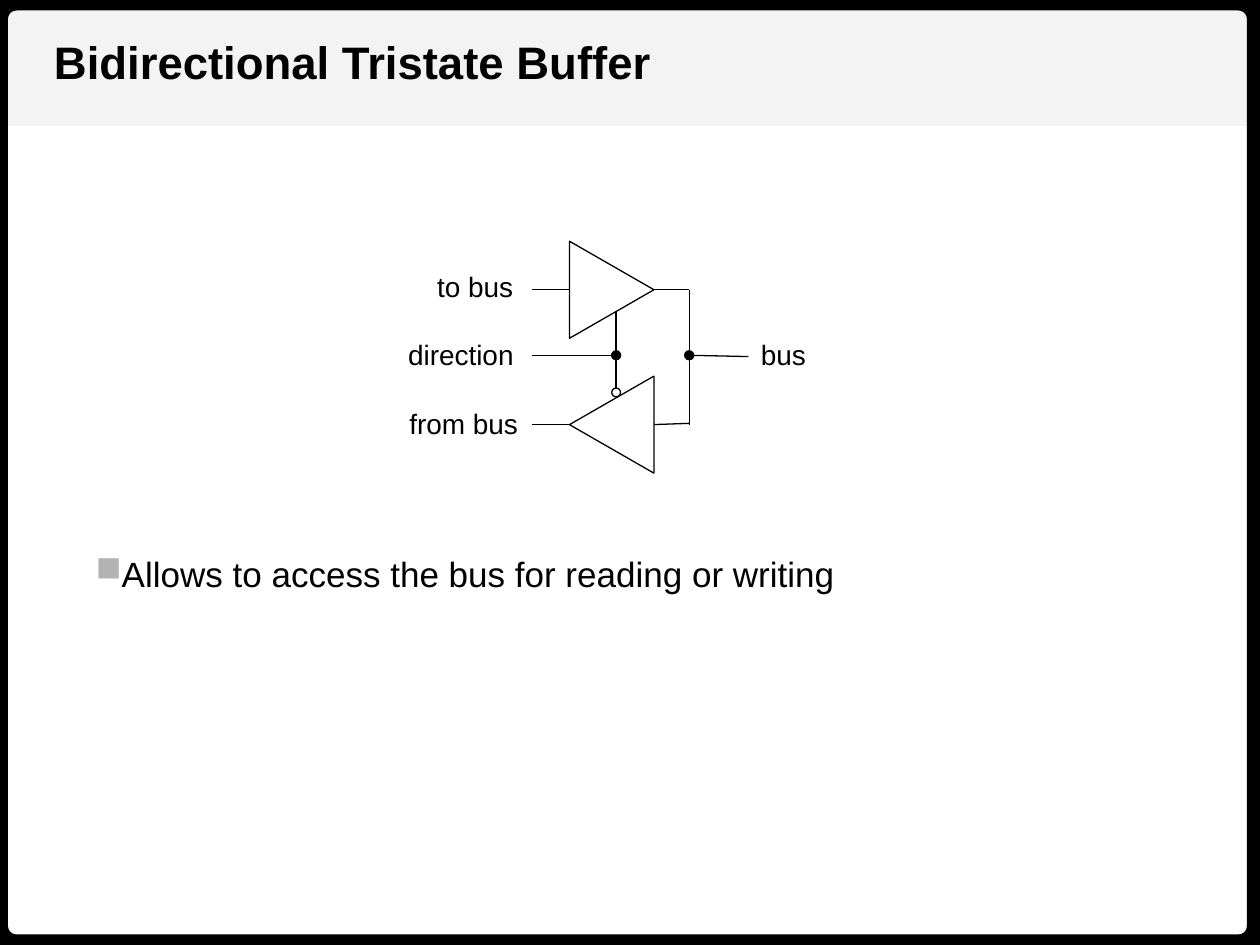
import pptx
import pptx.util
import pptx.dml.color
import pptx.enum.shapes
import pptx.enum.text
import pptx.oxml.ns
from lxml import etree
from typing import NamedTuple, Optional

COLS, ROWS = 100, 75
CELL = pptx.util.Inches(0.1)
COLORS = {"ink": "000000", "band": "F3F3F3", "paper": "FFFFFF", "bullet": "B2B2B2"}
SHAPES = pptx.enum.shapes.MSO_SHAPE
LABEL_H = 3.7
TO_ROW, DIR_ROW, FROM_ROW = 23, 28.2, 33.7
IN_COL, GATE_LEFT, GATE_RIGHT, BUS_COL = 42.2, 45.2, 51.9, 54.7
CTRL_COL, BUBBLE_ROW = 48.9, 30.8
GATE_W, GATE_H = 7.7, 6.7


class Label(NamedTuple):
    text: str
    col: float
    row: float
    width: float


class Wire(NamedTuple):
    x1: float
    y1: float
    x2: float
    y2: float
    dot: bool = False


class Gate(NamedTuple):
    row: float
    rotation: int


LABELS = [
    Label("to bus", 33.7, 20.9, 8.1),
    Label("direction", 31.4, 26.3, 10.5),
    Label("from bus", 31.5, 31.8, 10.8),
    Label("bus", 59.4, 26.3, 5.6),
]
GATES = [Gate(TO_ROW, 90), Gate(FROM_ROW, 270)]
WIRES = [
    Wire(IN_COL, TO_ROW, GATE_LEFT, TO_ROW),
    Wire(GATE_RIGHT, TO_ROW, BUS_COL, TO_ROW),
    Wire(IN_COL, FROM_ROW, GATE_LEFT, FROM_ROW),
    Wire(GATE_RIGHT, FROM_ROW, BUS_COL, FROM_ROW - 0.1),
    Wire(CTRL_COL, 24.7, CTRL_COL, BUBBLE_ROW),
    Wire(BUS_COL, TO_ROW, BUS_COL, FROM_ROW),
    Wire(BUS_COL, DIR_ROW, 59.4, DIR_ROW + 0.1, dot=True),
    Wire(CTRL_COL, DIR_ROW, IN_COL, DIR_ROW, dot=True),
]


def grid(*cells: float) -> list[int]:
    return [round(c * CELL) for c in cells]


def rgb(name: str) -> pptx.dml.color.RGBColor:
    return pptx.dml.color.RGBColor.from_string(COLORS[name])


def add_shape(s, kind, col: float, row: float, width: float, height: float,
              fill: Optional[str] = None, line: float = 0):
    sp = s.shapes.add_shape(kind, *grid(col, row, width, height))
    sp.shadow.inherit = False
    if fill:
        sp.fill.solid()
        sp.fill.fore_color.rgb = rgb(fill)
    else:
        sp.fill.background()
    if line:
        sp.line.color.rgb = rgb("ink")
        sp.line.width = pptx.util.Pt(line)
    else:
        sp.line.fill.background()
    return sp


def add_wire(s, wire: Wire) -> None:
    cx = s.shapes.add_connector(pptx.enum.shapes.MSO_CONNECTOR.STRAIGHT,
                                *grid(wire.x1, wire.y1, wire.x2, wire.y2))
    cx.line.color.rgb = rgb("ink")
    cx.line.width = pptx.util.Pt(0.75)
    qn = pptx.oxml.ns.qn
    if wire.dot:
        ln = cx.line._get_or_add_ln()
        etree.SubElement(ln, qn("a:headEnd"), type="oval")
    etree.SubElement(cx._element.spPr, qn("a:effectLst"))


def set_bullet(p, char: str, indent: float, tabs: tuple) -> None:
    qn = pptx.oxml.ns.qn
    pPr = p._p.get_or_add_pPr()
    pPr.set("marL", "0")
    pPr.set("indent", str(grid(indent)[0]))
    clr = etree.SubElement(pPr, qn("a:buClr"))
    etree.SubElement(clr, qn("a:srgbClr"), val=COLORS["bullet"])
    etree.SubElement(pPr, qn("a:buChar"), char=char)
    tab_list = etree.SubElement(pPr, qn("a:tabLst"))
    for tab in tabs:
        etree.SubElement(tab_list, qn("a:tab"), pos=str(grid(tab)[0]), algn="l")


def add_text(s, text: str, col: float, row: float, width: float, height: float, *,
             size: float = 16, bold: bool = False, wrap: bool = False,
             spacing: Optional[float] = None, bullet: Optional[str] = None) -> None:
    tf = s.shapes.add_textbox(*grid(col, row, width, height)).text_frame
    tf.word_wrap = wrap
    tf.auto_size = pptx.enum.text.MSO_AUTO_SIZE.SHAPE_TO_FIT_TEXT
    p = tf.paragraphs[0]
    if spacing:
        p.line_spacing = spacing
    if bullet:
        set_bullet(p, bullet, 3.8, (3.8, 11.8, 18.7))
    r = p.add_run()
    r.text = text
    r.font.name = "Arial"
    r.font.size = pptx.util.Pt(size)
    r.font.bold = bold
    r.font.color.rgb = rgb("ink")


def main() -> None:
    prs = pptx.Presentation()
    prs.slide_width, prs.slide_height = grid(COLS, ROWS)
    s = prs.slides.add_slide(prs.slide_layouts[6])

    add_shape(s, SHAPES.RECTANGLE, 0, 0, COLS, 10, fill="band")
    frame = add_shape(s, SHAPES.ROUNDED_RECTANGLE, -0.2, 0, COLS, ROWS, line=12)
    frame.adjustments[0] = 0.02

    add_text(s, "Bidirectional Tristate Buffer", 3.3, 2.2, 49.9, 5.4, size=26, bold=True)
    add_text(s, "Allows to access the bus for reading or writing", 2.8, 41.7, 93.9, 5.4,
             size=20, wrap=True, spacing=1.5, bullet="■")

    gate_col = (GATE_LEFT + GATE_RIGHT - GATE_W) / 2
    for gate in GATES:
        sp = add_shape(s, SHAPES.ISOSCELES_TRIANGLE, gate_col, gate.row - GATE_H / 2,
                       GATE_W, GATE_H, line=0.75)
        sp.rotation = gate.rotation
    for wire in WIRES:
        add_wire(s, wire)
    add_shape(s, SHAPES.OVAL, CTRL_COL - 0.35, BUBBLE_ROW, 0.7, 0.7, fill="paper", line=0.75)
    for label in LABELS:
        add_text(s, label.text, label.col, label.row, label.width, LABEL_H)

    prs.save("out.pptx")


if __name__ == "__main__":
    main()
